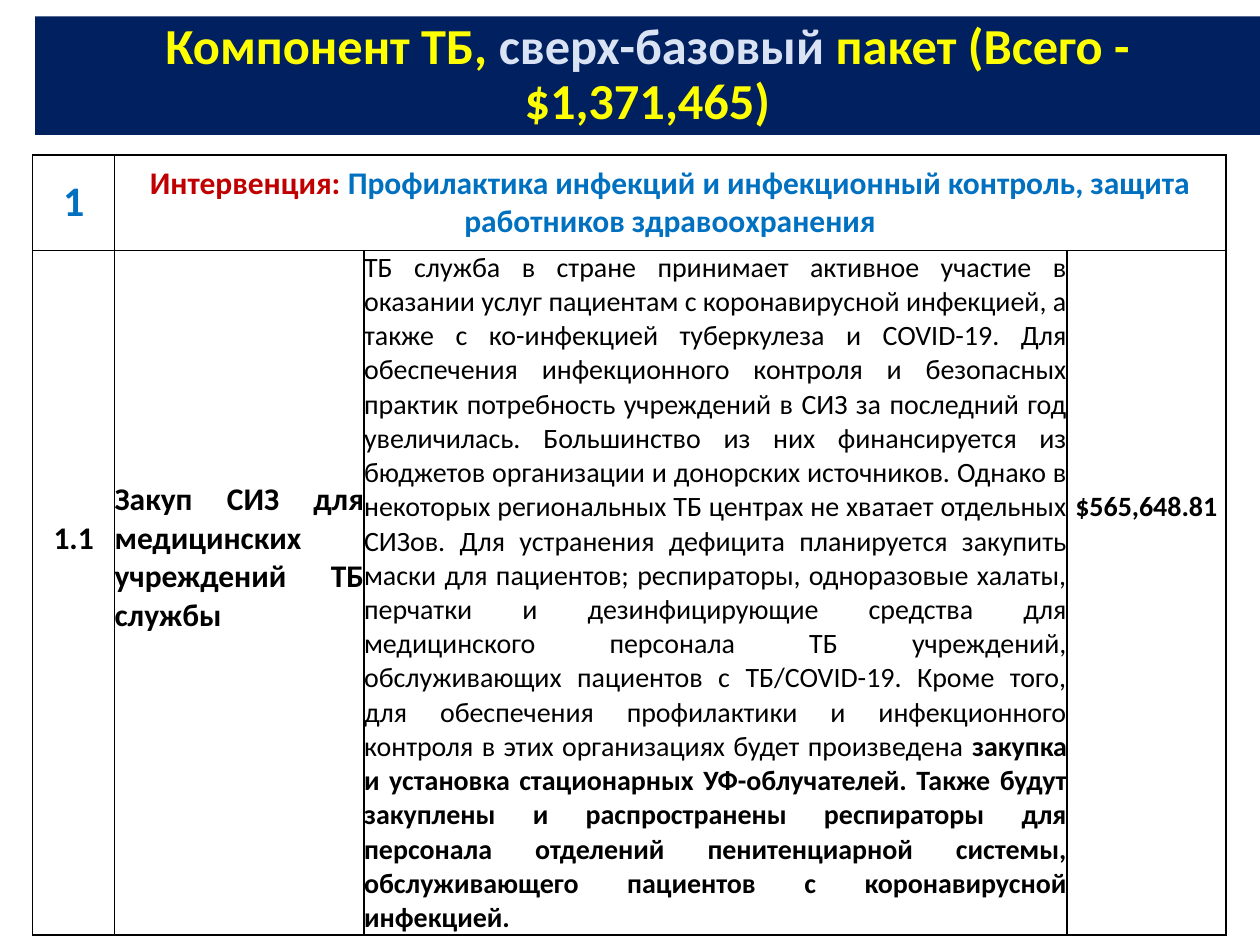
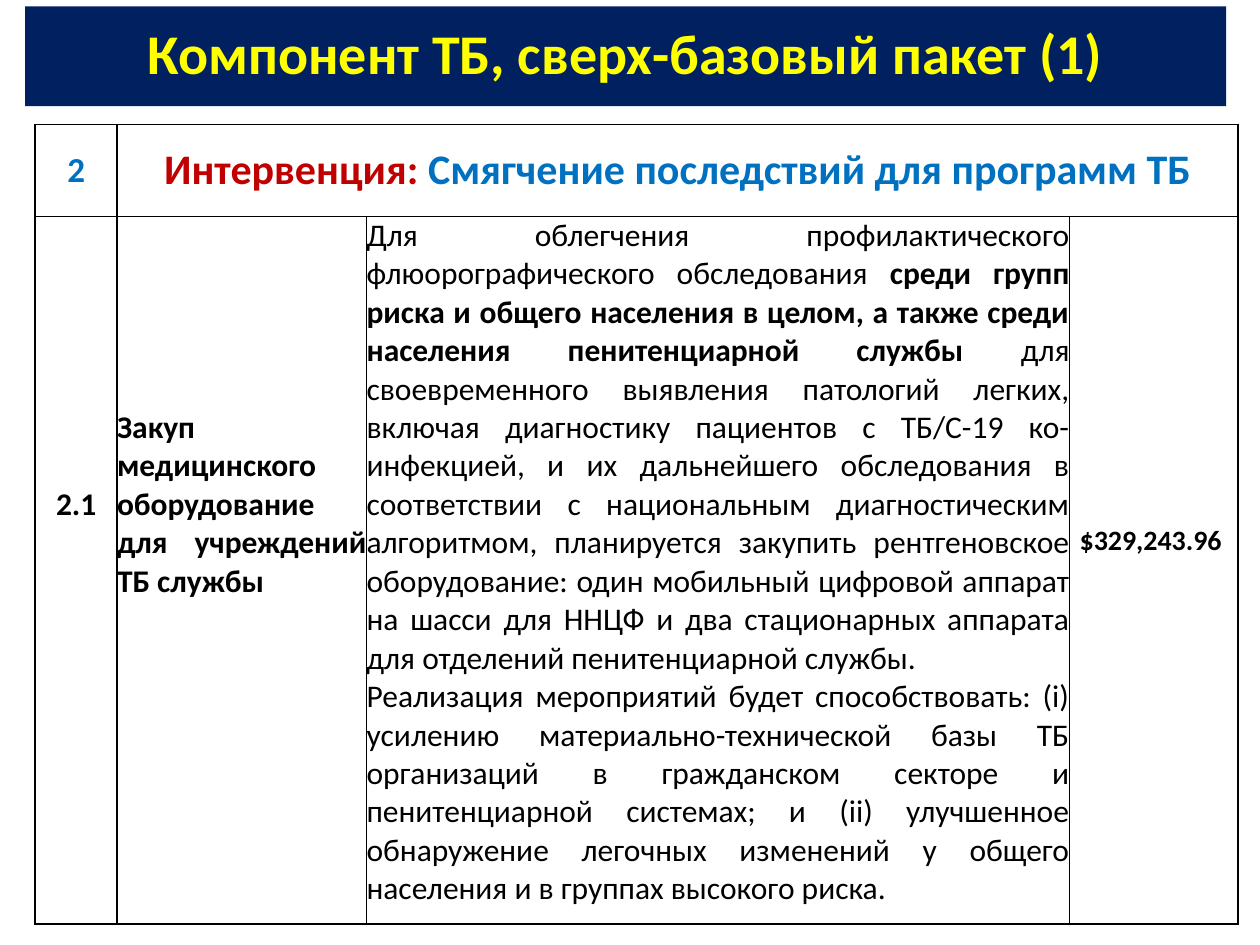
from lxml import etree
from pptx import Presentation
from pptx.dml.color import RGBColor
from pptx.enum.shapes import MSO_SHAPE
from pptx.enum.text import MSO_ANCHOR, PP_ALIGN
from pptx.oxml.ns import qn
from pptx.util import Cm, Pt

RECTANGLE = MSO_SHAPE.RECTANGLE
CENTER, JUSTIFY = PP_ALIGN.CENTER, PP_ALIGN.JUSTIFY
TOP, MIDDLE = MSO_ANCHOR.TOP, MSO_ANCHOR.MIDDLE

NAVY = RGBColor(0x00, 0x20, 0x60)
YELLOW = RGBColor(0xFF, 0xFF, 0x00)
PALE_BLUE = RGBColor(0xDA, 0xE3, 0xF3)
BLUE = RGBColor(0x00, 0x70, 0xC0)
RED = RGBColor(0xC0, 0x00, 0x00)
BLACK = RGBColor(0x00, 0x00, 0x00)

FONT = "Calibri"
LINE_CM_PER_POINT = 0.043  # height of a single-spaced line per point of size
COLUMNS = (1.65, 5.03, 14.17)  # number, activity, description


# Text
def add_run(paragraph, text, size, color=BLACK, bold=True):
    run = paragraph.add_run()
    run.text = text
    font = run.font
    font.name, font.size, font.bold = FONT, Pt(size), bold
    font.color.rgb = color


def fill_paragraph(paragraph, runs, size, alignment):
    """Write runs given as (text, color, bold)."""
    paragraph.alignment = alignment
    for text, color, bold in runs:
        add_run(paragraph, text, size, color, bold)


# Title band
def add_title(slide, box, runs, size):
    band = slide.shapes.add_shape(RECTANGLE, *(Cm(value) for value in box))
    band.shadow.inherit = False
    band.fill.solid()
    band.fill.fore_color.rgb = NAVY
    band.line.fill.background()
    frame = band.text_frame
    frame.word_wrap = True
    frame.vertical_anchor = MIDDLE
    paragraph = frame.paragraphs[0]
    paragraph.line_spacing = 0.9
    fill_paragraph(paragraph, [(text, color, True) for text, color in runs],
                   size, CENTER)


# Table
def style_cell(cell):
    """Clear the fill and margins and draw thin black borders."""
    cell.fill.background()
    cell.margin_left = cell.margin_right = 0
    cell.margin_top = cell.margin_bottom = 0
    properties = cell._tc.get_or_add_tcPr()
    for index, side in enumerate(("lnL", "lnR", "lnT", "lnB")):
        line = etree.Element(qn(f"a:{side}"), w=str(Pt(1)))
        solid = etree.SubElement(line, qn("a:solidFill"))
        etree.SubElement(solid, qn("a:srgbClr"), val=str(BLACK))
        properties.insert(index, line)


def add_table(slide, left, top, price_width, row_heights):
    widths = (*COLUMNS, price_width)
    frame = slide.shapes.add_table(
        len(row_heights), len(widths), Cm(left), Cm(top),
        Cm(sum(widths)), Cm(sum(row_heights)))
    table = frame.table
    table.first_row = table.horz_banding = False
    for column, width in zip(table.columns, widths):
        column.width = Cm(width)
    for row, height in zip(table.rows, row_heights):
        row.height = Cm(height)
    for cell in table.iter_cells():
        style_cell(cell)
    table.cell(0, 1).merge(table.cell(0, 3))
    return table


def fill_cell(cell, paragraphs, size, alignment=CENTER, anchor=TOP,
              lines_above=0):
    """Write the paragraphs, lowered by a number of text lines."""
    cell.vertical_anchor = anchor
    cell.margin_top = Cm(lines_above * size * LINE_CM_PER_POINT)
    frame = cell.text_frame
    for index, runs in enumerate(paragraphs):
        paragraph = frame.add_paragraph() if index else frame.paragraphs[0]
        fill_paragraph(paragraph, runs, size, alignment)


def fill_heading(table, number, number_size, intervention, size):
    fill_cell(table.cell(0, 0), [[(number, BLUE, True)]], number_size,
              anchor=MIDDLE)
    fill_cell(table.cell(0, 1),
              [[("Интервенция: ", RED, True), (intervention, BLUE, True)]],
              size, anchor=MIDDLE)


def fill_activity(table, number, activity, description, description_size,
                  price, lines_above):
    """Fill the second row; lines_above is for number, activity and price."""
    number_lines, activity_lines, price_lines = lines_above
    fill_cell(table.cell(1, 0), [[(number, BLACK, True)]], 18,
              lines_above=number_lines)
    fill_cell(table.cell(1, 1), [[(activity, BLACK, True)]], 18, JUSTIFY,
              lines_above=activity_lines)
    paragraphs = [[(text, BLACK, bold) for text, bold in runs]
                  for runs in description]
    fill_cell(table.cell(1, 2), paragraphs, description_size, JUSTIFY)
    fill_cell(table.cell(1, 3), [[(price, BLACK, True)]], 16,
              lines_above=price_lines)


# Slides
def build_infection_control(slide):
    add_title(slide, (0.71, 0.33, 24.69, 2.39), [
        ("Компонент ТБ, ", YELLOW),
        ("сверх-базовый", PALE_BLUE),
        (" пакет (Всего - $1,371,465)", YELLOW),
    ], 28.8)
    table = add_table(slide, 0.66, 3.12, 3.2, (1.93, 13.28))
    fill_heading(table, "1", 24,
                 "Профилактика инфекций и инфекционный контроль, "
                 "защита работников здравоохранения", 18)
    description = [[
        ("ТБ служба в стране принимает активное участие в оказании услуг "
         "пациентам с коронавирусной инфекцией, а также с ко-инфекцией "
         "туберкулеза и COVID-19. Для обеспечения инфекционного контроля и "
         "безопасных практик потребность учреждений в СИЗ за последний год "
         "увеличилась. Большинство из них финансируется из бюджетов "
         "организации и донорских источников. Однако в некоторых "
         "региональных ТБ центрах не хватает отдельных СИЗов. Для "
         "устранения дефицита планируется закупить маски для пациентов; "
         "респираторы, одноразовые халаты, перчатки и дезинфицирующие "
         "средства для медицинского персонала ТБ учреждений, обслуживающих "
         "пациентов с ТБ/COVID-19. Кроме того, для обеспечения профилактики "
         "и инфекционного контроля в этих организациях будет произведена ",
         False),
        ("закупка и установка стационарных УФ-облучателей. Также будут "
         "закуплены и распространены респираторы для персонала отделений "
         "пенитенциарной системы, обслуживающего пациентов с коронавирусной "
         "инфекцией.", True),
    ]]
    fill_activity(table, "1.1",
                  "Закуп СИЗ для медицинских учреждений ТБ службы",
                  description, 16, "$565,648.81", (7, 6, 7))


def build_mitigation(slide):
    add_title(slide, (0.51, 0.13, 24.21, 2.01),
              [("Компонент ТБ, сверх-базовый пакет (1)", YELLOW)], 32)
    table = add_table(slide, 0.71, 2.51, 3.4, (1.85, 14.27))
    fill_heading(table, "2", 20, "Смягчение последствий для программ ТБ", 24)
    description = [
        [
            ("Для облегчения профилактического флюорографического "
             "обследования ", False),
            ("среди групп риска и общего населения в целом, а также среди "
             "населения пенитенциарной службы ", True),
            ("для своевременного выявления патологий легких, включая "
             "диагностику пациентов с ТБ/С-19 ко-инфекцией, и их дальнейшего "
             "обследования в соответствии с национальным диагностическим "
             "алгоритмом, планируется закупить рентгеновское оборудование: "
             "один мобильный цифровой аппарат на шасси для ННЦФ и два "
             "стационарных аппарата для отделений пенитенциарной службы.",
             False),
        ],
        [
            ("Реализация мероприятий будет способствовать: (i) усилению "
             "материально-технической базы ТБ организаций в гражданском "
             "секторе и пенитенциарной системах; и (ii) улучшенное "
             "обнаружение легочных изменений у общего населения и в группах "
             "высокого риска.", False),
        ],
    ]
    fill_activity(table, "2.1",
                  "Закуп медицинского оборудование для учреждений ТБ службы",
                  description, 18, "$329,243.96 ", (7, 5, 9))


def main():
    presentation = Presentation()
    presentation.slide_width, presentation.slide_height = Cm(25.4), Cm(19.05)
    blank = presentation.slide_layouts[6]
    for build in (build_infection_control, build_mitigation):
        build(presentation.slides.add_slide(blank))
    presentation.save("out.pptx")


if __name__ == "__main__":
    main()
